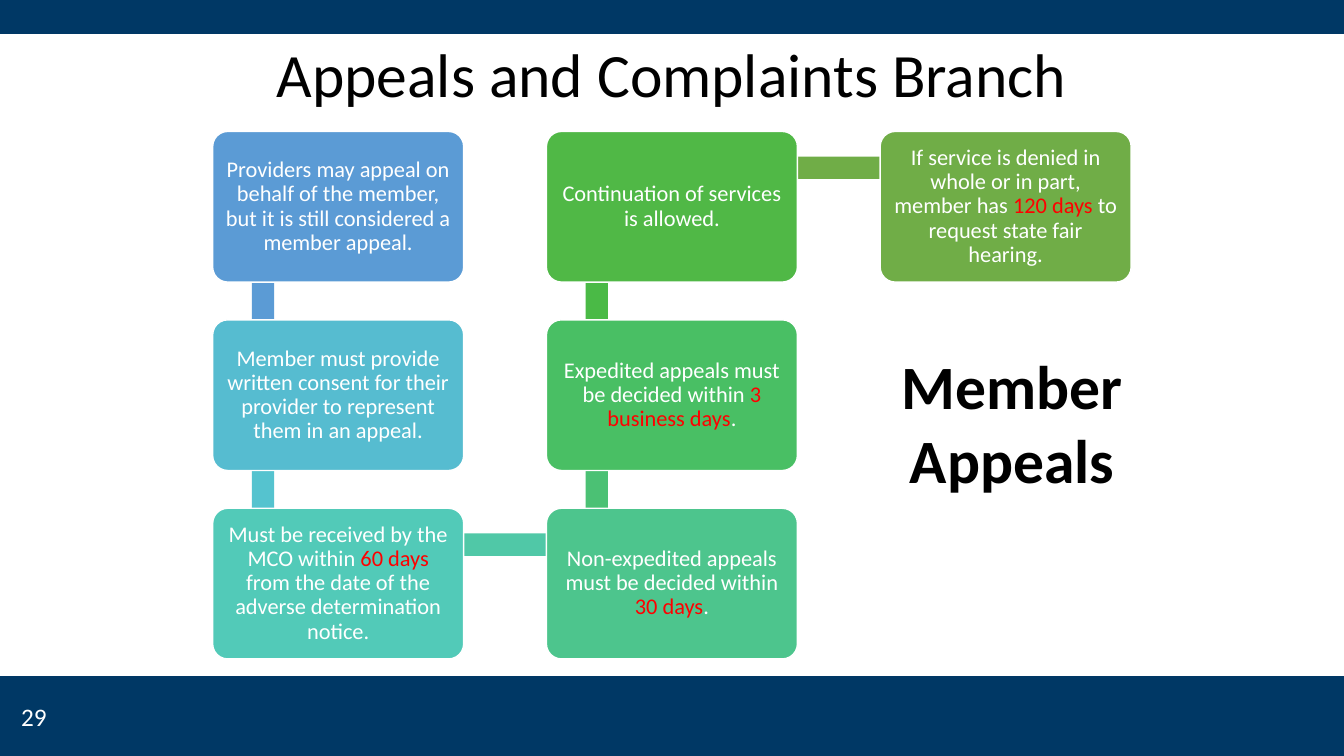
from pptx import Presentation
from pptx.dml.color import RGBColor
from pptx.enum.shapes import MSO_SHAPE as Preset
from pptx.enum.text import MSO_ANCHOR as Anchor, PP_ALIGN as Align
from pptx.util import Pt

NAVY = RGBColor(0x00, 0x38, 0x65)
BLACK = RGBColor(0x00, 0x00, 0x00)
WHITE = RGBColor(0xFF, 0xFF, 0xFF)
RED = RGBColor(0xFF, 0x00, 0x00)
BLUE = RGBColor(0x5B, 0x9B, 0xD5)
SKY = RGBColor(0x56, 0xBC, 0xD0)
SKY_LINK = RGBColor(0x55, 0xC3, 0xCF)
TEAL = RGBColor(0x52, 0xCA, 0xB8)
TEAL_LINK = RGBColor(0x50, 0xC8, 0xA7)
MINT = RGBColor(0x4D, 0xC5, 0x8D)
MINT_LINK = RGBColor(0x4B, 0xC1, 0x74)
EMERALD = RGBColor(0x49, 0xBF, 0x64)
EMERALD_LINK = RGBColor(0x4A, 0xBA, 0x46)
GREEN = RGBColor(0x50, 0xB8, 0x46)
OLIVE = RGBColor(0x70, 0xAD, 0x47)

PAGE_W, PAGE_H = 960, 540
LEFT, TOP = 151.9, 93.9
STEP_X, STEP_Y = 238.4, 134.6
CARD_W, CARD_H = 179.3, 107.6
LINK_X, LINK_Y, LINK_SIZE = 36, 26, 16

# Column, row, card colour, colour of the link to the next card,
# then the wording in spans that alternate white and red
STEPS = [
    (0, 0, BLUE, BLUE, ["Providers may appeal on behalf of the member, "
                        "but it is still considered a member appeal."]),
    (0, 1, SKY, SKY_LINK, ["Member must provide written consent for their "
                           "provider to represent them in an appeal."]),
    (0, 2, TEAL, TEAL_LINK, ["Must be received by the MCO within ", "60 days ",
                             "from the date of the adverse determination notice."]),
    (1, 2, MINT, MINT_LINK, ["Non-expedited appeals must be decided within ",
                             "30 days", "."]),
    (1, 1, EMERALD, EMERALD_LINK, ["Expedited appeals must be decided within ",
                                   "3 business days", "."]),
    (1, 0, GREEN, OLIVE, ["Continuation of services is allowed."]),
    (2, 0, OLIVE, None, ["If service is denied in whole or in part, member has ",
                         "120 days ", "to request state fair hearing."]),
]


class Painter:
    """Draws styled elements on one page; lengths are in points."""

    font_name = "Calibri"

    def __init__(self, page):
        self.page = page

    def style(self, para, size, color, align, bold=False):
        para.alignment = align
        para.font.name = self.font_name
        para.font.size = Pt(size)
        para.font.bold = bold
        para.font.color.rgb = color

    def block(self, left, top, width, height, fill, preset=Preset.RECTANGLE):
        shape = self.page.shapes.add_shape(
            preset, Pt(left), Pt(top), Pt(width), Pt(height))
        shape.shadow.inherit = False
        shape.fill.solid()
        shape.fill.fore_color.rgb = fill
        shape.line.fill.background()
        return shape

    def label(self, left, top, width, height, text, size, color,
              align=Align.CENTER, bold=False, spacing=1.0):
        box = self.page.shapes.add_textbox(Pt(left), Pt(top), Pt(width), Pt(height))
        box.text_frame.word_wrap = True
        para = box.text_frame.paragraphs[0]
        para.text = text
        para.line_spacing = spacing
        self.style(para, size, color, align, bold)

    def link(self, start, end, fill):
        (x1, y1), (x2, y2) = start, end
        half = LINK_SIZE / 2
        if x1 == x2:
            self.block(x1 - half, min(y1, y2), LINK_SIZE, abs(y2 - y1), fill)
        else:
            self.block(x1, y1 - half, x2 - x1, LINK_SIZE, fill)

    def card(self, left, top, fill, spans):
        shape = self.block(left, top, CARD_W, CARD_H, fill, Preset.ROUNDED_RECTANGLE)
        shape.adjustments[0] = 0.1
        shape.line.color.rgb = WHITE
        shape.line.width = Pt(1)
        frame = shape.text_frame
        frame.word_wrap = True
        frame.vertical_anchor = Anchor.MIDDLE
        frame.margin_left = frame.margin_right = Pt(5)
        frame.margin_top = frame.margin_bottom = Pt(5)
        para = frame.paragraphs[0]
        para.line_spacing = 0.9
        self.style(para, 16, WHITE, Align.CENTER)
        for index, text in enumerate(spans):
            span = para.add_run()
            span.text = text
            span.font.color.rgb = RED if index % 2 else WHITE


def corner(step):
    return LEFT + step[0] * STEP_X, TOP + step[1] * STEP_Y


def link_point(step):
    left, top = corner(step)
    return left + LINK_X, top + LINK_Y


def main():
    deck = Presentation()
    deck.slide_width, deck.slide_height = Pt(PAGE_W), Pt(PAGE_H)
    painter = Painter(deck.slides.add_slide(deck.slide_layouts[6]))

    # Bands and title
    painter.block(0, 0, PAGE_W, 24.3, NAVY)
    painter.block(0, 483, PAGE_W, 57, NAVY)
    painter.label(66, 28, 828, 104, "Appeals and Complaints Branch", 44, BLACK,
                  spacing=0.9)

    # Links lie behind the cards
    for step, following in zip(STEPS, STEPS[1:]):
        painter.link(link_point(step), link_point(following), step[3])
    for step in STEPS:
        painter.card(*corner(step), step[2], step[4])

    # Heading and page number
    painter.label(580, 245, 286, 114, "Member Appeals", 44, BLACK, bold=True)
    painter.label(8, 497.5, 168, 29, "29", 18, WHITE, Align.LEFT)

    deck.save("out.pptx")


if __name__ == "__main__":
    main()
